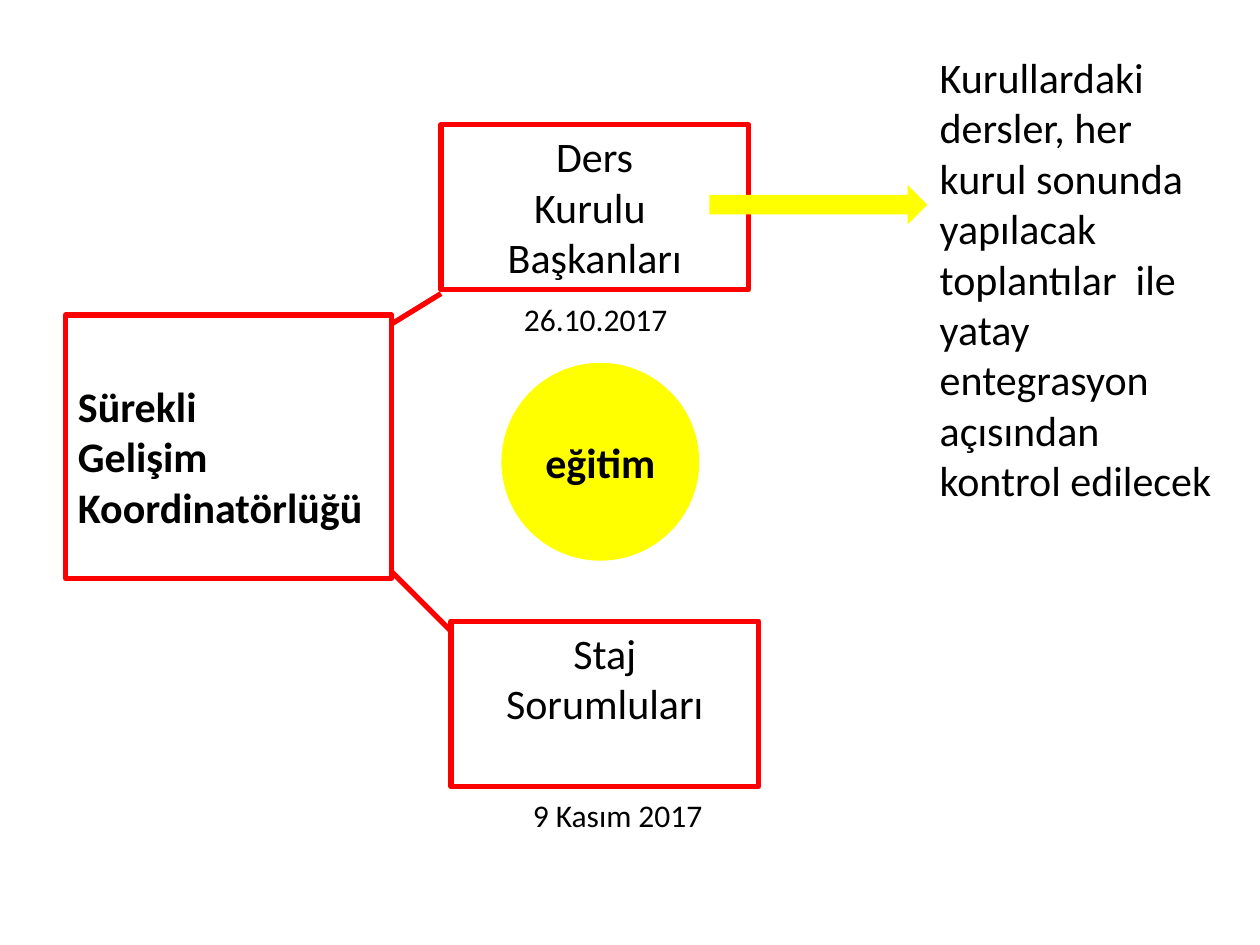
from pptx import Presentation
from pptx.dml.color import RGBColor
from pptx.enum.shapes import MSO_CONNECTOR, MSO_SHAPE
from pptx.enum.text import MSO_ANCHOR, PP_ALIGN
from pptx.oxml.ns import qn
from pptx.util import Inches, Pt
from lxml import etree

LEFT, CENTER = PP_ALIGN.LEFT, PP_ALIGN.CENTER
TOP, MIDDLE = MSO_ANCHOR.TOP, MSO_ANCHOR.MIDDLE
RECTANGLE, OVAL, ARROW = MSO_SHAPE.RECTANGLE, MSO_SHAPE.OVAL, MSO_SHAPE.RIGHT_ARROW
STRAIGHT = MSO_CONNECTOR.STRAIGHT

THEME = {
    "font": "Calibri",
    "text": RGBColor(0, 0, 0),
    "outline": RGBColor(255, 0, 0),
    "accent": RGBColor(255, 255, 0),
    "outline_width": Pt(3),
    "body": Pt(24),
    "date": Pt(18),
}

# Content: lines, (left, top, width, height) in inches, then text settings
BOXES = [
    (["Ders", "Kurulu ", "Başkanları"], (3.5, 0.99, 2.44, 1.31), {"align": CENTER}),
    (["Sürekli", "Gelişim", "Koordinatörlüğü"], (0.52, 2.5, 2.59, 2.09),
     {"bold": True, "top_inset": 0.52}),
    (["Staj", "Sorumluları"], (3.58, 4.93, 2.44, 1.31), {"align": CENTER}),
]
TOPIC = (["eğitim"], (3.98, 2.88, 1.57, 1.57))
NOTES = [
    (["26.10.2017"], (4.06, 2.33, 1.89, 0.4), "date"),
    (["9 Kasım 2017"], (4.13, 6.27, 1.89, 0.4), "date"),
    (["Kurullardaki dersler, her kurul sonunda yapılacak",
      "toplantılar  ile yatay entegrasyon açısından kontrol edilecek"],
     (7.36, 0.36, 2.44, 3.74), "body"),
]
NOTE_ARROW = (5.63, 1.47, 1.73, 0.31)
LINKS = [((3.11, 2.57), (3.5, 2.33)), ((3.11, 4.54), (3.58, 5.01))]


def inches(values):
    return [Inches(value) for value in values]


def write(shape, lines, size="body", align=LEFT, bold=False, anchor=TOP, top_inset=0.05):
    frame = shape.text_frame
    frame.word_wrap = True
    frame.vertical_anchor = anchor
    frame.margin_top = Inches(top_inset)
    frame.text = "\n".join(lines)
    for paragraph in frame.paragraphs:
        paragraph.alignment = align
        font = paragraph.font
        font.name, font.size, font.bold = THEME["font"], THEME[size], bold
        font.color.rgb = THEME["text"]


def style_outline(line):
    line.color.rgb = THEME["outline"]
    line.width = THEME["outline_width"]


def add_accent(slide, preset, place):
    shape = slide.shapes.add_shape(preset, *inches(place))
    shape.shadow.inherit = False
    shape.fill.solid()
    shape.fill.fore_color.rgb = THEME["accent"]
    shape.line.fill.background()
    return shape


def main():
    deck = Presentation()
    deck.slide_width, deck.slide_height = Inches(10), Inches(7.5)
    slide = deck.slides.add_slide(deck.slide_layouts[6])

    # Outlined boxes
    for lines, place, settings in BOXES:
        box = slide.shapes.add_shape(RECTANGLE, *inches(place))
        box.shadow.inherit = False
        box.fill.background()
        style_outline(box.line)
        write(box, lines, **settings)

    # Central topic and arrow to the note
    lines, place = TOPIC
    write(add_accent(slide, OVAL, place), lines, align=CENTER, bold=True, anchor=MIDDLE)
    add_accent(slide, ARROW, NOTE_ARROW)

    # Dates and note
    for lines, place, size in NOTES:
        write(slide.shapes.add_textbox(*inches(place)), lines, size)

    # Lines between the boxes
    for start, end in LINKS:
        link = slide.shapes.add_connector(STRAIGHT, *inches(start + end))
        style_outline(link.line)
        etree.SubElement(link._element.spPr, qn("a:effectLst"))

    deck.save("out.pptx")


if __name__ == "__main__":
    main()
